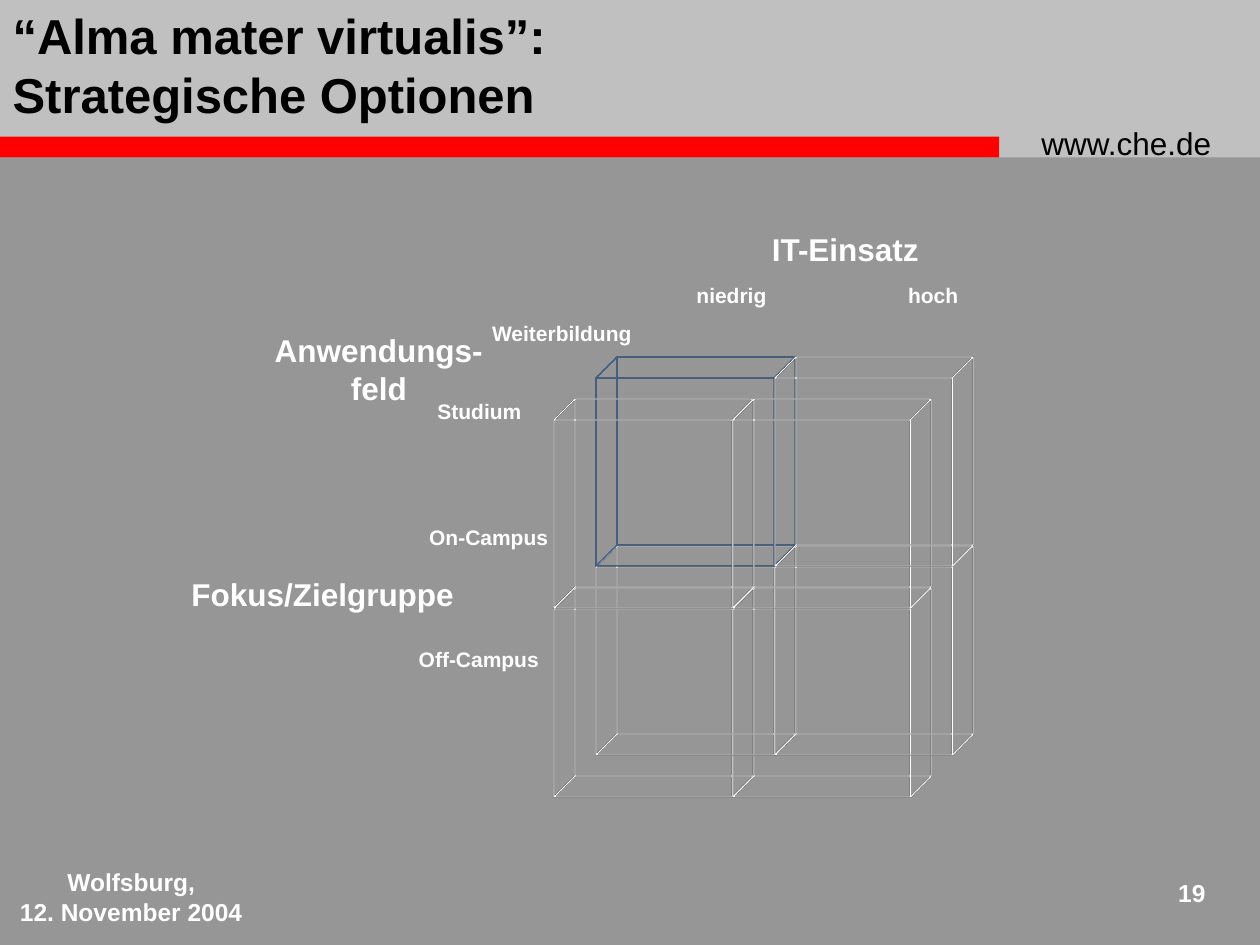
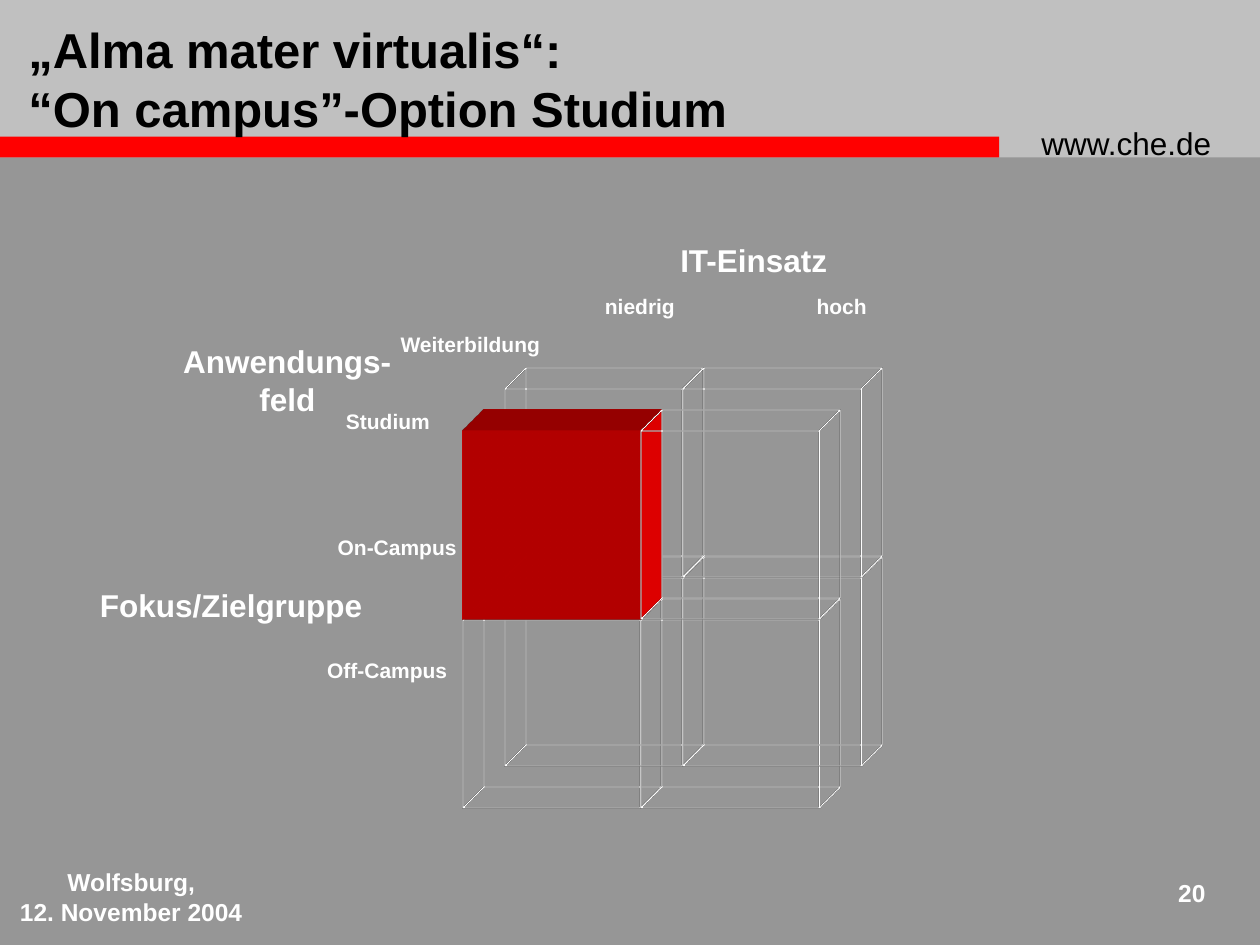
from lxml import etree
from pptx import Presentation
from pptx.dml.color import RGBColor
from pptx.enum.shapes import MSO_SHAPE
from pptx.enum.text import MSO_ANCHOR, MSO_AUTO_SIZE, PP_ALIGN
from pptx.oxml.ns import qn
from pptx.util import Pt

RECT = MSO_SHAPE.RECTANGLE
TOP, MIDDLE = MSO_ANCHOR.TOP, MSO_ANCHOR.MIDDLE
LEFT, MID, RIGHT = PP_ALIGN.LEFT, PP_ALIGN.CENTER, PP_ALIGN.RIGHT
FIXED = MSO_AUTO_SIZE.NONE

FONT = "Arial"
GREY, SILVER, RED = "969696", "C0C0C0", "FF0000"
WHITE, BLACK, ORANGE = "FFFFFF", "000000", "FF3300"

WIDE, HIGH, DEEP = 102, 108, 24
DEPTH = Pt(33.87)
FRONT, BACK = 0, 1
LOWER = [(0, 1, FRONT), (1, 1, FRONT), (0, 1, BACK), (1, 1, BACK)]

LABELS = [
    ("Fokus/Zielgruppe", -214, 85, 164, 29, 18, RIGHT),
    ("Anwendungs-\nfeld", -166.5, -54.3, 133, 50, 18, MID),
    ("IT-Einsatz", 117, -112, 99, 29, 18, MID),
    ("On-Campus", -78.3, 56, 83, 22, 12, LEFT),
    ("Off-Campus", -84.3, 125.8, 83, 22, 12, LEFT),
    ("niedrig", 74, -82, 55, 22, 12, MID),
    ("hoch", 195.2, -82, 43, 22, 12, MID),
    ("Studium", -73.6, -16, 63, 22, 12, LEFT),
    ("Weiterbildung", -42.4, -60.3, 95, 22, 12, LEFT),
]

SLIDES = [
    {
        "title": "“Alma mater virtualis”:\nStrategische Optionen",
        "box": (0, 0, 546, 74),
        "page": "19",
        "base": (316.5, 240),
        "upper": [(0, 0, BACK), (0, 0, FRONT), (1, 0, FRONT), (1, 0, BACK)],
        "fills": {(0, 0, BACK): ORANGE},
    },
    {
        "title": "„Alma mater virtualis“:\n“On campus”-Option Studium",
        "box": (9, 8, 415, 74),
        "page": "20",
        "base": (264.2, 246.2),
        "upper": [(0, 0, BACK), (0, 0, FRONT), (1, 0, BACK), (1, 0, FRONT)],
        "fills": {(0, 0, FRONT): RED},
    },
]


def paint(fmt, tint):
    fmt.solid()
    fmt.fore_color.rgb = RGBColor.from_string(tint)


def rect(slide, box, fill=None, line=None):
    shape = slide.shapes.add_shape(RECT, *map(Pt, box))
    shape.shadow.inherit = False
    if fill:
        paint(shape.fill, fill)
    else:
        shape.fill.background()
    if line:
        paint(shape.line.fill, line)
        shape.line.width = Pt(0.75)
    else:
        shape.line.fill.background()
    return shape


def write(shape, text, size, tint, align=LEFT, bold=True, wrap=True, anchor=TOP):
    frame = shape.text_frame
    frame.text = text
    frame.word_wrap = wrap
    frame.auto_size = FIXED
    frame.vertical_anchor = anchor
    for para in frame.paragraphs:
        para.alignment = align
        for run in para.runs:
            run.font.name = FONT
            run.font.size = Pt(size)
            run.font.bold = bold
            paint(run.font.fill, tint)


def label(slide, box, *args, **opts):
    write(slide.shapes.add_textbox(*map(Pt, box)), *args, **opts)


def extrude(shape, kind, tint):
    props = shape.element.spPr
    scene = etree.SubElement(props, qn("a:scene3d"))
    etree.SubElement(scene, qn("a:camera"), prst="legacyObliqueTopRight")
    etree.SubElement(scene, qn("a:lightRig"), rig="legacyFlat3", dir="b")
    solid = etree.SubElement(props, qn("a:sp3d"),
                             extrusionH=str(DEPTH), prstMaterial=kind)
    for name in ("a:bevelT", "a:bevelB"):
        etree.SubElement(solid, qn(name), w="13500", h="13500", prst="angle")
    shade = etree.SubElement(solid, qn("a:extrusionClr"))
    etree.SubElement(shade, qn("a:srgbClr"), val=tint)


def cube(slide, base, cell, fill):
    col, row, layer = cell
    x = base[0] + col * WIDE + layer * DEEP
    y = base[1] + row * HIGH - layer * DEEP
    line = None if fill else WHITE
    kind = "legacyMatte" if fill == RED else "legacyWireframe"
    extrude(rect(slide, (x, y, WIDE, HIGH), fill, line), kind, fill or WHITE)


def frame(slide, data):
    rect(slide, (0, 0, 720, 90), SILVER)
    rect(slide, (0, 78, 571, 12), RED)
    label(slide, (588, 67.5, 126, 29), "www.che.de", 18, BLACK, bold=False)
    label(slide, (0, 492, 150, 36), "Wolfsburg,\n12. November 2004", 14, WHITE, MID)
    label(slide, (654, 498, 42, 30), data["page"], 14, WHITE, RIGHT)
    title = slide.shapes.title
    title.element.getparent().append(title.element)
    title.left, title.top, title.width, title.height = map(Pt, data["box"])
    write(title, data["title"], 28, BLACK, anchor=MIDDLE)


def build(deck, data):
    slide = deck.slides.add_slide(deck.slide_layouts[5])
    frame(slide, data)
    base = data["base"]
    for cell in LOWER + data["upper"]:
        cube(slide, base, cell, data["fills"].get(cell))
    for text, x, y, wide, high, size, align in LABELS:
        box = (base[0] + x, base[1] + y, wide, high)
        label(slide, box, text, size, WHITE, align, wrap=False)


def main():
    deck = Presentation()
    deck.slide_width, deck.slide_height = Pt(720), Pt(540)
    paint(deck.slide_master.background.fill, GREY)
    for data in SLIDES:
        build(deck, data)
    deck.save("out.pptx")


if __name__ == "__main__":
    main()
